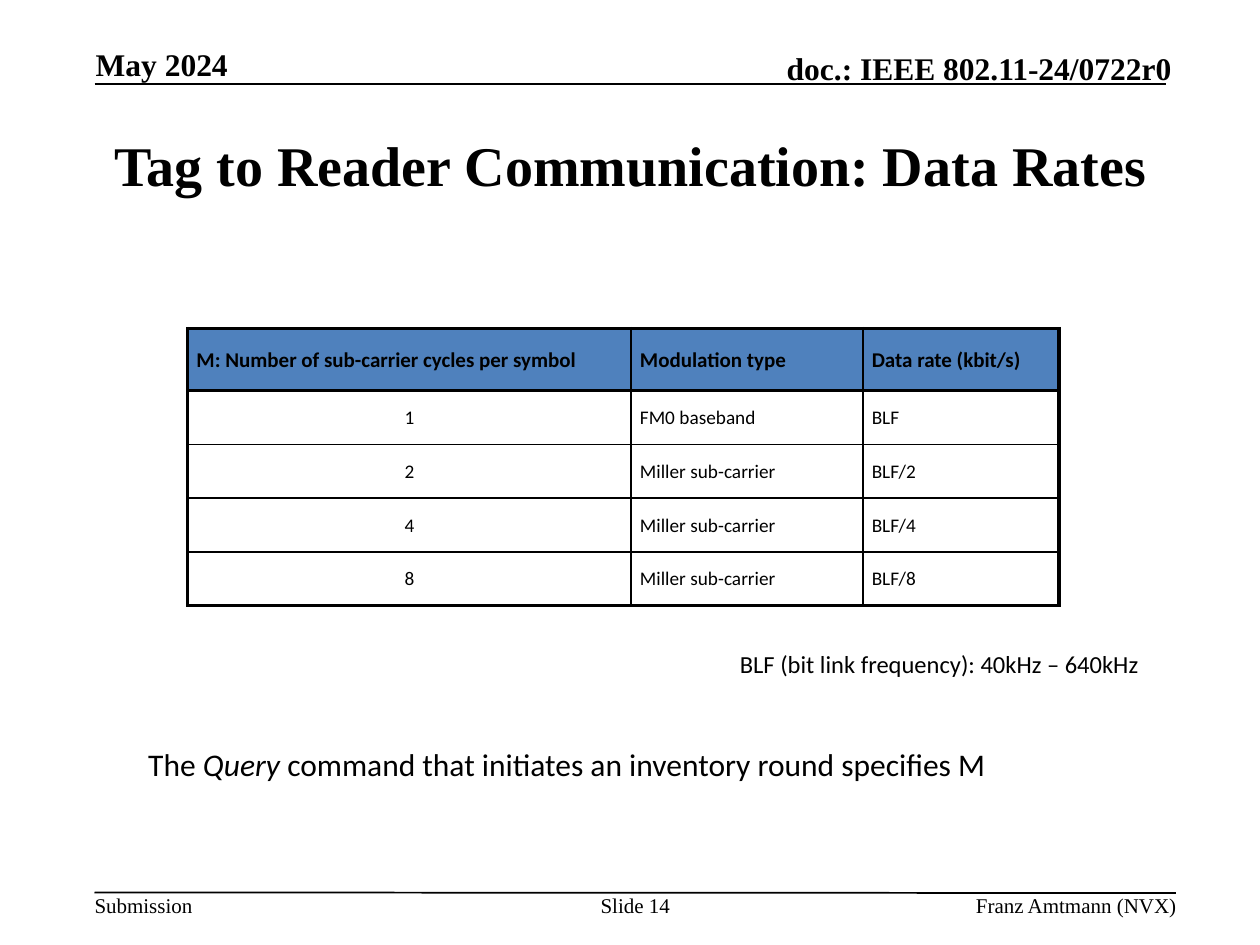
from pptx import Presentation
from pptx.dml.color import RGBColor
from pptx.enum.shapes import MSO_CONNECTOR as Connector
from pptx.enum.text import MSO_ANCHOR as Anchor, PP_ALIGN as Align
from pptx.oxml.ns import qn
from pptx.util import Pt
from lxml.etree import SubElement

SERIF, SANS = "Times New Roman", "Calibri"
BLACK, HEADER_BLUE = "000000", "4F81BD"
THIN, THICK = 1, 2.25
COLUMN_WIDTHS = [253.4, 132.5, 112.1]
ROW_HEIGHTS = [35.5] + [30.7] * 4
RATES = [
    ("M: Number of sub-carrier cycles per symbol", "Modulation type", "Data rate (kbit/s)"),
    ("1", "FM0 baseband", "BLF"),
    ("2", "Miller sub-carrier", "BLF/2"),
    ("4", "Miller sub-carrier", "BLF/4"),
    ("8", "Miller sub-carrier", "BLF/8"),
]


def rgb(hex_color):
    return RGBColor.from_string(hex_color)


def style(paragraph, size, font, bold=False, align=Align.LEFT):
    paragraph.alignment = align
    paragraph.font.size = Pt(size)
    paragraph.font.name = font
    paragraph.font.bold = bold
    paragraph.font.color.rgb = rgb(BLACK)


def add_text(slide, box, runs, size, font, bold=False, align=Align.LEFT,
             anchor=Anchor.TOP, insets=(0, 0)):
    frame = slide.shapes.add_textbox(*map(Pt, box)).text_frame
    frame.word_wrap = True
    frame.vertical_anchor = anchor
    frame.margin_left = frame.margin_right = Pt(insets[0])
    frame.margin_top = frame.margin_bottom = Pt(insets[1])
    paragraph = frame.paragraphs[0]
    style(paragraph, size, font, bold, align)
    for words, italic in runs:
        run = paragraph.add_run()
        run.text = words
        if italic:
            run.font.italic = True


def add_rule(slide, *ends):
    rule = slide.shapes.add_connector(Connector.STRAIGHT, *map(Pt, ends))
    rule.line.color.rgb = rgb(BLACK)
    rule.line.width = Pt(THIN)
    SubElement(rule._element.spPr, qn("a:effectLst"))


def set_border(cell, side, width):
    border = SubElement(cell._tc.get_or_add_tcPr(), qn(f"a:ln{side}"), w=str(Pt(width)))
    fill = SubElement(border, qn("a:solidFill"))
    SubElement(fill, qn("a:srgbClr"), val=BLACK)


def fill_cell(cell, is_header):
    if not is_header:
        cell.fill.background()
        return
    cell.fill.solid()
    cell.fill.fore_color.rgb = rgb(HEADER_BLUE)
    tint = cell._tc.tcPr.find(f".//{qn('a:srgbClr')}")
    SubElement(tint, qn("a:alpha"), val="50000")


def add_rate_table(slide, left, top):
    last_row, last_column = len(RATES) - 1, len(COLUMN_WIDTHS) - 1
    table = slide.shapes.add_table(
        len(RATES), len(COLUMN_WIDTHS), Pt(left), Pt(top),
        Pt(sum(COLUMN_WIDTHS)), Pt(sum(ROW_HEIGHTS))).table
    table.first_row = table.horz_banding = False
    for column, width in zip(table.columns, COLUMN_WIDTHS):
        column.width = Pt(width)
    for r, (labels, height) in enumerate(zip(RATES, ROW_HEIGHTS)):
        table.rows[r].height = Pt(height)
        for c, label in enumerate(labels):
            is_header = r == 0
            cell = table.cell(r, c)
            cell.text = label
            cell.vertical_anchor = Anchor.MIDDLE
            cell.margin_left = cell.margin_right = Pt(5)
            cell.margin_top = cell.margin_bottom = Pt(3)
            paragraph = cell.text_frame.paragraphs[0]
            paragraph.line_spacing = 1.05
            centred = c == 0 and not is_header
            style(paragraph, 12 if is_header else 11, SANS, is_header,
                  Align.CENTER if centred else Align.LEFT)
            thick_sides = {"L": c == 0, "R": c == last_column,
                           "T": r <= 1, "B": r in (0, last_row)}
            for side, thick in thick_sides.items():
                set_border(cell, side, THICK if thick else THIN)
            fill_cell(cell, is_header)


def add_header_and_footer(slide):
    add_rule(slide, 54, 48, 666, 48)
    add_rule(slide, 54, 510, 672, 510.3)
    add_text(slide, (54.7, 26, 148, 21.6), [("May 2024", False)], 18, SERIF, True,
             anchor=Anchor.BOTTOM)
    add_text(slide, (393.5, 28, 276, 21.6), [("doc.: IEEE 802.11-24/0722r0", False)],
             18, SERIF, True, Align.RIGHT, Anchor.BOTTOM)
    footers = [
        (54, 57, "Submission", Align.LEFT),
        (342, 42, "Slide 14", Align.CENTER),
        (422, 250.3, "Franz Amtmann (NVX)", Align.RIGHT),
    ]
    for left, width, words, align in footers:
        add_text(slide, (left, 510, width, 14.5), [(words, False)], 12, SERIF, align=align)


def main():
    deck = Presentation()
    deck.slide_width, deck.slide_height = Pt(720), Pt(540)
    slide = deck.slides.add_slide(deck.slide_layouts[6])
    add_header_and_footer(slide)
    add_text(slide, (54.5, 72, 612, 44), [("Tag to Reader Communication: Data Rates", False)],
             32, SERIF, True, Align.CENTER, Anchor.MIDDLE, (7.2, 3.6))
    add_text(slide, (54, 422, 540, 29),
             [("The ", False), ("Query ", True),
              ("command that initiates an inventory round specifies M", False)],
             18, SANS, align=Align.CENTER, insets=(7.2, 3.6))
    add_rate_table(slide, 107.3, 187.8)
    add_text(slide, (365.8, 367.2, 342, 24.5),
             [("BLF (bit link frequency): 40kHz – 640kHz", False)],
             14, SANS, align=Align.CENTER, insets=(7.2, 3.6))
    deck.save("out.pptx")


if __name__ == "__main__":
    main()
